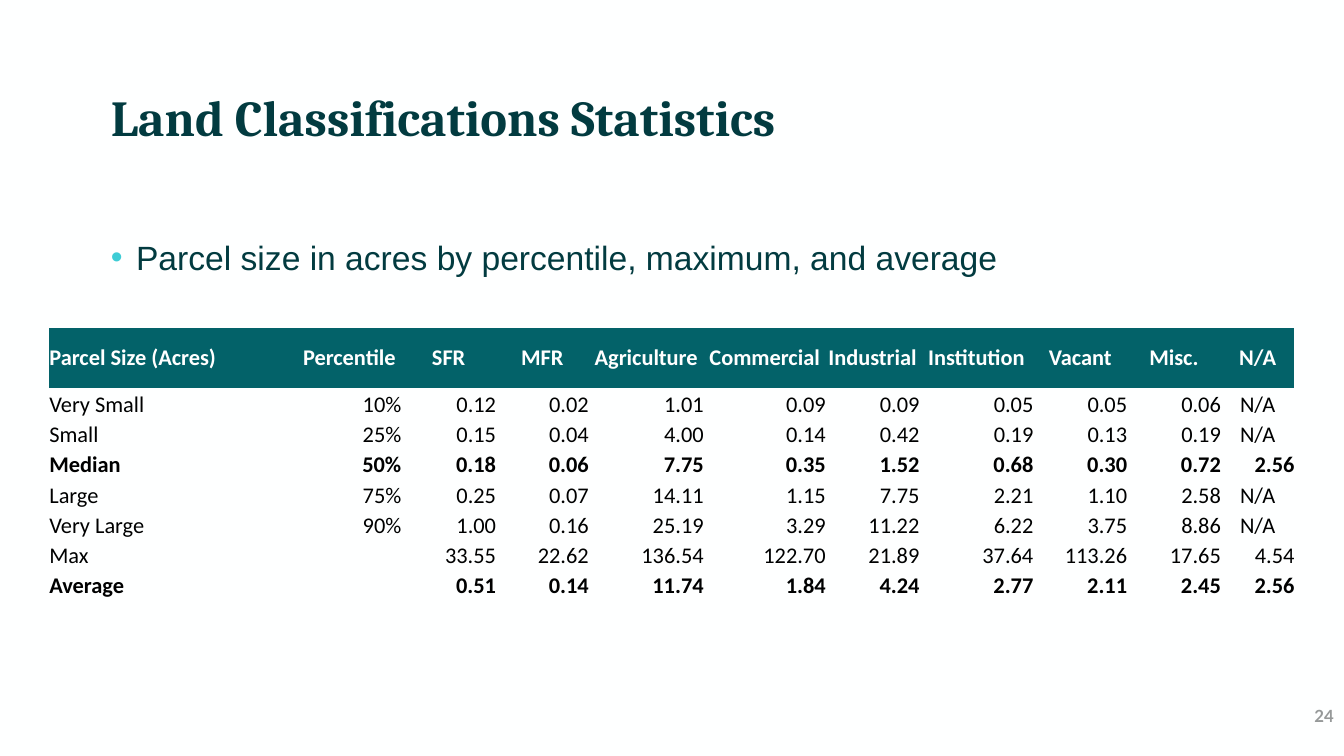
from lxml import etree
from pptx import Presentation
from pptx.dml.color import RGBColor
from pptx.enum.text import MSO_ANCHOR, PP_ALIGN
from pptx.oxml.ns import qn
from pptx.util import Pt

PX = 9144
LEFT, CENTER, RIGHT = PP_ALIGN.LEFT, PP_ALIGN.CENTER, PP_ALIGN.RIGHT
TOP, MIDDLE, BOTTOM = MSO_ANCHOR.TOP, MSO_ANCHOR.MIDDLE, MSO_ANCHOR.BOTTOM
PLAIN_TABLE_STYLE = "{2D5ABB26-0587-4C30-8999-92F81FD0307C}"

COLORS = {
    "background": "FEFFFF",
    "heading": "023B40",
    "bullet": "3DCCD5",
    "header": "036269",
    "header_text": "FFFFFF",
    "data": "000000",
    "page_number": "969999",
}

COLUMN_WIDTHS = [246, 103, 94, 92, 114, 121, 93, 113, 93, 93, 73]
HEADER_HEIGHT, ROW_HEIGHT = 60, 30
BOLD_ROWS = ("Parcel Size (Acres)", "Median", "Average")
PARCEL_SIZES = [
    ["Parcel Size (Acres)", "Percentile", "SFR", "MFR", "Agriculture", "Commercial",
     "Industrial", "Institution", "Vacant", "Misc.", "N/A"],
    ["Very Small", "10%", "0.12", "0.02", "1.01", "0.09", "0.09", "0.05", "0.05", "0.06", "N/A"],
    ["Small", "25%", "0.15", "0.04", "4.00", "0.14", "0.42", "0.19", "0.13", "0.19", "N/A"],
    ["Median", "50%", "0.18", "0.06", "7.75", "0.35", "1.52", "0.68", "0.30", "0.72", "2.56"],
    ["Large", "75%", "0.25", "0.07", "14.11", "1.15", "7.75", "2.21", "1.10", "2.58", "N/A"],
    ["Very Large", "90%", "1.00", "0.16", "25.19", "3.29", "11.22", "6.22", "3.75", "8.86", "N/A"],
    ["Max", "", "33.55", "22.62", "136.54", "122.70", "21.89", "37.64", "113.26", "17.65", "4.54"],
    ["Average", "", "0.51", "0.14", "11.74", "1.84", "4.24", "2.77", "2.11", "2.45", "2.56"],
]


def rgb(name):
    return RGBColor.from_string(COLORS[name])


def write(paragraph, text, *, font, size, color, bold=False, align=LEFT):
    paragraph.alignment = align
    run = paragraph.add_run()
    run.text = text
    run.font.name = font
    run.font.size = Pt(size)
    run.font.bold = bold
    run.font.color.rgb = rgb(color)


def set_margins(holder, top=0):
    holder.margin_left = holder.margin_right = holder.margin_bottom = 0
    holder.margin_top = top * PX


def add_text(slide, text, left, top, width, height, *, inset_top=0, anchor=TOP, **style):
    box = slide.shapes.add_textbox(left * PX, top * PX, width * PX, height * PX)
    frame = box.text_frame
    frame.word_wrap = True
    frame.vertical_anchor = anchor
    set_margins(frame, inset_top)
    paragraph = frame.paragraphs[0]
    write(paragraph, text, **style)
    return paragraph


def add_bullet(paragraph, indent):
    paragraph.space_before = Pt(10)
    properties = paragraph._p.get_or_add_pPr()
    properties.set("marL", str(indent * PX))
    properties.set("indent", str(-indent * PX))
    bullet_color = etree.SubElement(properties, qn("a:buClr"))
    etree.SubElement(bullet_color, qn("a:srgbClr"), val=COLORS["bullet"])
    etree.SubElement(properties, qn("a:buFont"), typeface="Arial")
    etree.SubElement(properties, qn("a:buChar"), char="•")


def fill_cell(cell, text, *, is_header, is_label, bold):
    set_margins(cell)
    cell.vertical_anchor = MIDDLE if is_header else BOTTOM
    if is_header:
        cell.fill.solid()
        cell.fill.fore_color.rgb = rgb("header")
    else:
        cell.fill.background()
    if is_label:
        align = LEFT
    else:
        align = CENTER if is_header or text == "N/A" else RIGHT
    write(cell.text_frame.paragraphs[0], text, font="Calibri", size=16, bold=bold,
          color="header_text" if is_header else "data", align=align)


def add_parcel_table(slide, left, top):
    heights = [HEADER_HEIGHT] + [ROW_HEIGHT] * (len(PARCEL_SIZES) - 1)
    table = slide.shapes.add_table(
        len(heights), len(COLUMN_WIDTHS), left * PX, top * PX,
        sum(COLUMN_WIDTHS) * PX, sum(heights) * PX).table
    table.horz_banding = False
    table._tbl.tblPr.find(qn("a:tableStyleId")).text = PLAIN_TABLE_STYLE
    for column, width in zip(table.columns, COLUMN_WIDTHS):
        column.width = width * PX
    for row_index, (row, height, values) in enumerate(zip(table.rows, heights, PARCEL_SIZES)):
        row.height = height * PX
        for column_index, (cell, value) in enumerate(zip(row.cells, values)):
            fill_cell(cell, value, is_header=row_index == 0, is_label=column_index == 0,
                      bold=values[0] in BOLD_ROWS)


def main():
    deck = Presentation()
    deck.slide_width, deck.slide_height = 1333 * PX, 750 * PX
    slide = deck.slides.add_slide(deck.slide_layouts[6])
    slide.background.fill.solid()
    slide.background.fill.fore_color.rgb = rgb("background")

    add_text(slide, "Land Classifications Statistics", 110, 64, 1113, 137, inset_top=21,
             font="Cambria", size=36, color="heading", bold=True)
    summary = add_text(slide, "Parcel size in acres by percentile, maximum, and average",
                       110, 235, 1113, 417, font="Arial", size=24, color="heading")
    add_bullet(summary, 25)
    add_text(slide, "24", 1108, 690, 215, 40, anchor=MIDDLE,
             font="Lato", size=12, color="page_number", bold=True, align=RIGHT)
    add_parcel_table(slide, 49, 325)
    deck.save("out.pptx")


if __name__ == "__main__":
    main()
